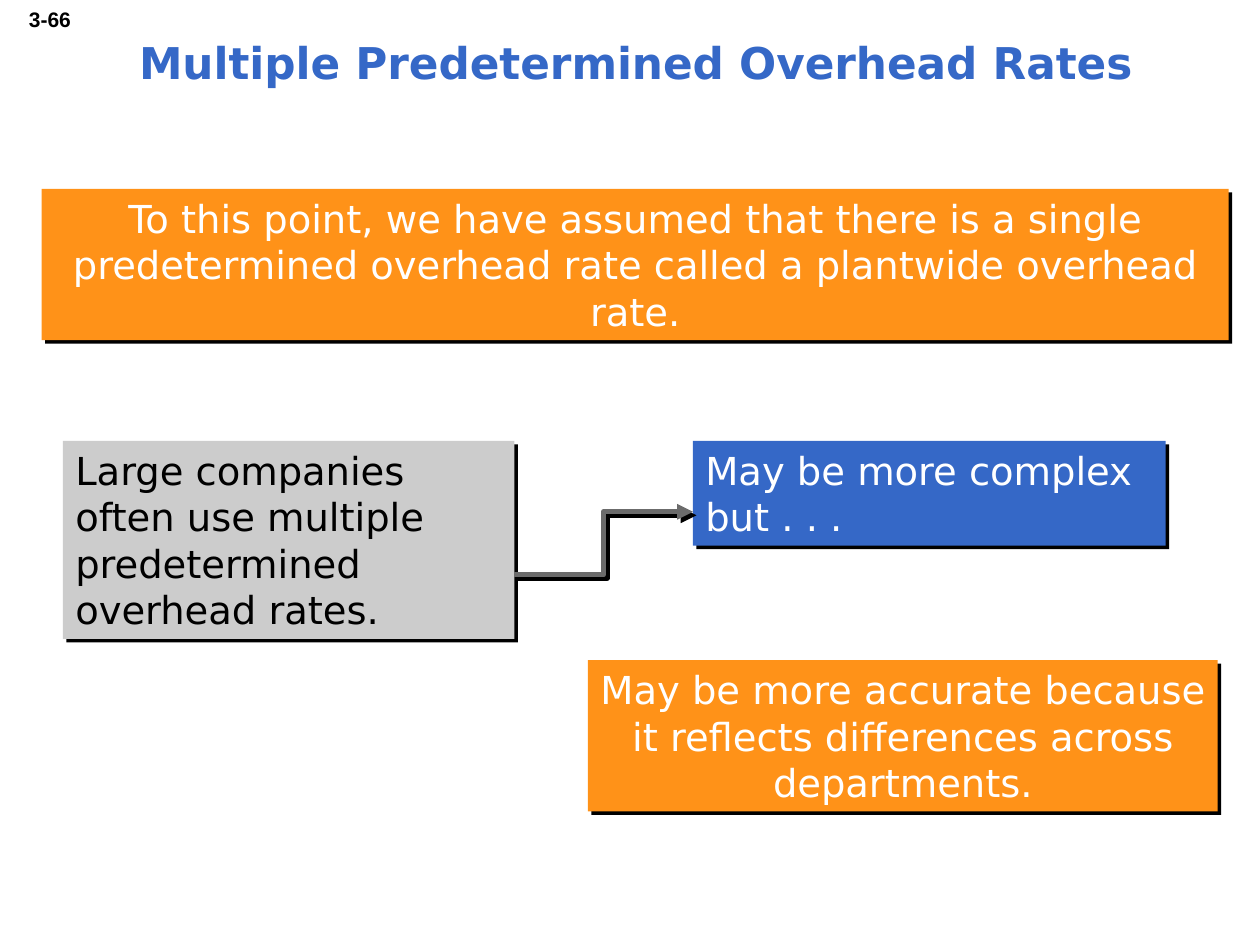
from lxml.etree import SubElement
from pptx import Presentation
from pptx.dml.color import RGBColor
from pptx.enum.shapes import MSO_CONNECTOR, MSO_SHAPE
from pptx.enum.text import MSO_ANCHOR, PP_ALIGN
from pptx.oxml.ns import qn
from pptx.util import Cm, Pt

TITLE = "Multiple Predetermined Overhead Rates"
TITLE_AREA = (0.43, 0.2, 24.77, 2.11)
PAGE_NUMBER = "3-66"
PAGE_NUMBER_AREA = (0.28, 0, 1.4, 0.76)

STATEMENTS = [
    ("To this point, we have assumed that there is a single predetermined "
     "overhead rate called a plantwide overhead rate.",
     (0.84, 3.81, 23.93, 3.05), "orange", "white", PP_ALIGN.CENTER),
    ("Large companies often use multiple predetermined overhead rates.",
     (1.27, 8.89, 9.1, 3.99), "gray", "black", PP_ALIGN.LEFT),
    ("May be more complex but . . .",
     (13.97, 8.89, 9.53, 2.11), "blue", "white", PP_ALIGN.LEFT),
    ("May be more accurate because it reflects differences across departments.",
     (11.85, 13.31, 12.7, 3.05), "orange", "white", PP_ALIGN.CENTER),
]
ARROW = (10.37, 11.59, 13.97, 10.32)

THEME = {
    "orange": RGBColor(0xFF, 0x92, 0x18),
    "gray": RGBColor(0xCC, 0xCC, 0xCC),
    "blue": RGBColor(0x35, 0x68, 0xC7),
    "arrow": RGBColor(0x6B, 0x6B, 0x6B),
    "white": RGBColor(0xFF, 0xFF, 0xFF),
    "black": RGBColor(0, 0, 0),
    "font": "DejaVu Sans",
    "number_font": "Arial",
    "title_size": Pt(25),
    "body_size": Pt(22),
    "number_size": Pt(12),
    "arrow_width": Pt(3),
    "shadow_distance": Pt(2.8),
    "shadow_angle": 45,
}


def lengths(values):
    return [Cm(value) for value in values]


def write(shape, text, size, color, align, font="font", bold=False):
    shape.text_frame.text = text
    para = shape.text_frame.paragraphs[0]
    para.alignment = align
    para.font.name = THEME[font]
    para.font.size = THEME[size]
    para.font.bold = bold
    para.font.color.rgb = THEME[color]


def add_hard_shadow(shape):
    shape.shadow.inherit = False
    effects = shape._element.spPr.find(qn("a:effectLst"))
    shadow = SubElement(
        effects, qn("a:outerShdw"), blurRad="0",
        dist=str(THEME["shadow_distance"]),
        dir=str(THEME["shadow_angle"] * 60000), algn="ctr", rotWithShape="0")
    SubElement(shadow, qn("a:srgbClr"), val=str(THEME["black"]))


def add_statement(page, text, area, fill, color, align):
    box = page.shapes.add_shape(MSO_SHAPE.RECTANGLE, *lengths(area))
    box.fill.solid()
    box.fill.fore_color.rgb = THEME[fill]
    box.line.fill.background()
    add_hard_shadow(box)
    box.text_frame.word_wrap = True
    box.text_frame.vertical_anchor = MSO_ANCHOR.TOP
    write(box, text, "body_size", color, align)


def add_arrow(page):
    arrow = page.shapes.add_connector(MSO_CONNECTOR.ELBOW, *lengths(ARROW))
    arrow.line.color.rgb = THEME["arrow"]
    arrow.line.width = THEME["arrow_width"]
    SubElement(arrow.line._get_or_add_ln(), qn("a:tailEnd"), type="triangle")
    SubElement(arrow._element.spPr, qn("a:effectLst"))
    add_arrow_shadow(arrow)


def add_arrow_shadow(arrow):
    effects = arrow._element.spPr.find(qn("a:effectLst"))
    shadow = SubElement(
        effects, qn("a:outerShdw"), blurRad="0",
        dist=str(THEME["shadow_distance"]),
        dir=str(THEME["shadow_angle"] * 60000), algn="ctr", rotWithShape="0")
    SubElement(shadow, qn("a:srgbClr"), val=str(THEME["black"]))


def main():
    deck = Presentation()
    deck.slide_width, deck.slide_height = Cm(25.4), Cm(19.05)
    page = deck.slides.add_slide(deck.slide_layouts[5])

    title = page.shapes.title
    title.left, title.top, title.width, title.height = lengths(TITLE_AREA)
    title.text_frame.vertical_anchor = MSO_ANCHOR.MIDDLE
    write(title, TITLE, "title_size", "blue", PP_ALIGN.CENTER, bold=True)

    number = page.shapes.add_textbox(*lengths(PAGE_NUMBER_AREA))
    number.text_frame.word_wrap = False
    write(number, PAGE_NUMBER, "number_size", "black", PP_ALIGN.RIGHT,
          "number_font", True)

    for statement in STATEMENTS[:3]:
        add_statement(page, *statement)
    add_arrow(page)
    add_statement(page, *STATEMENTS[3])

    deck.save("out.pptx")


if __name__ == "__main__":
    main()
